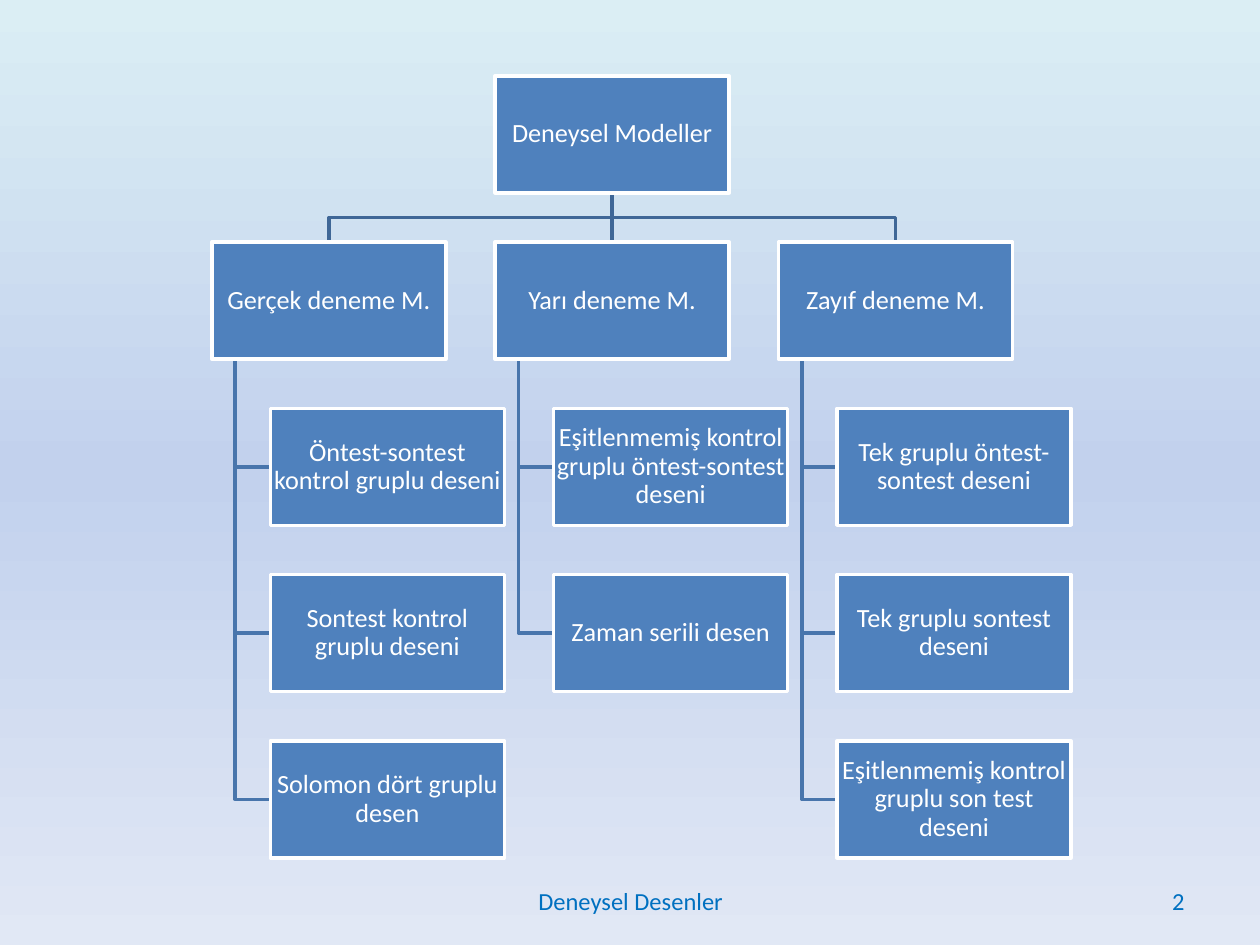
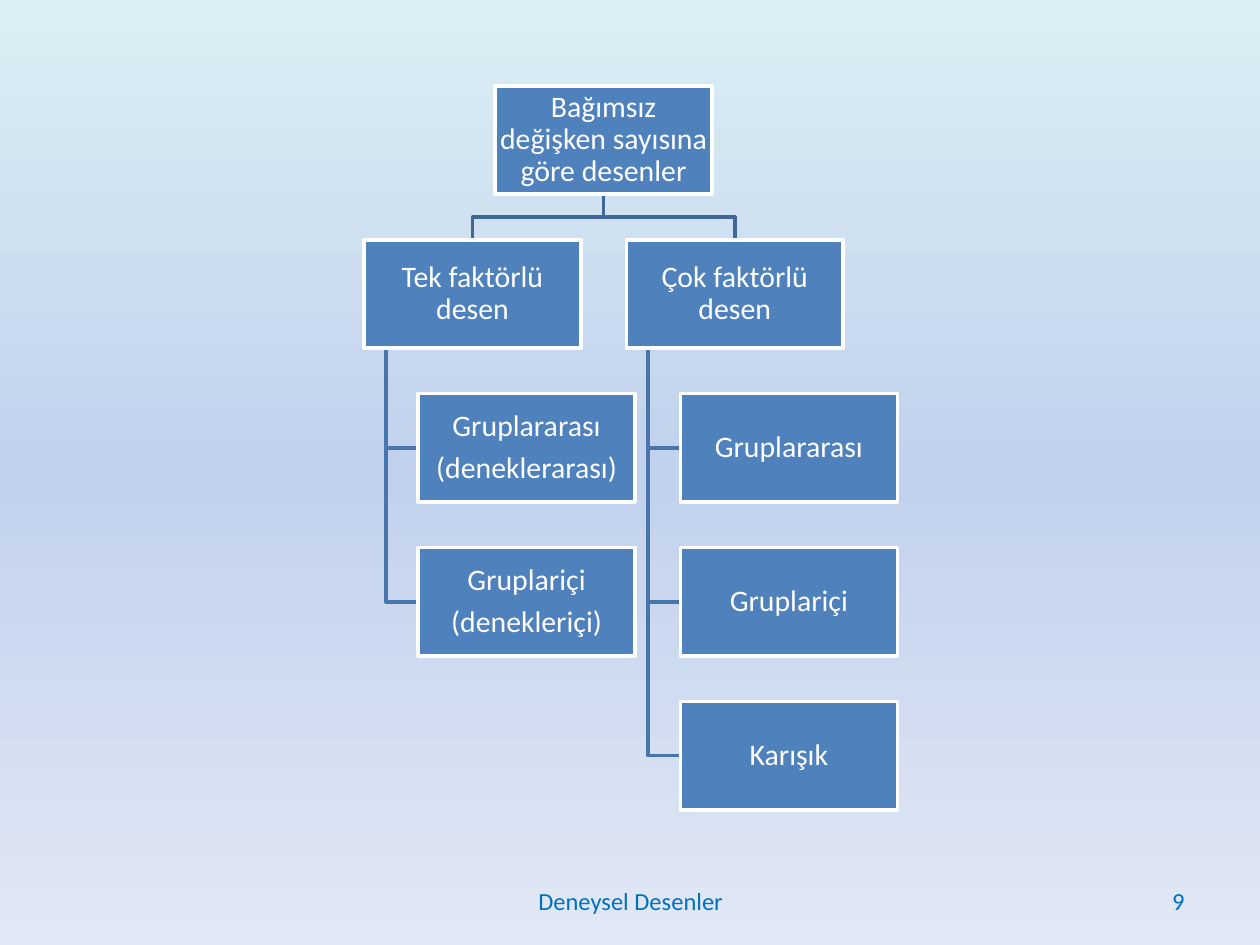
from copy import deepcopy
from pptx import Presentation
from pptx.dml.color import RGBColor
from pptx.enum.shapes import MSO_CONNECTOR as Link, MSO_SHAPE as Shape
from pptx.enum.text import MSO_ANCHOR as Anchor, PP_ALIGN as Align
from pptx.oxml import parse_xml
from pptx.oxml.ns import nsdecls, qn
from pptx.util import Cm, Pt

WHITE, BLUE, NOTE = "FFFFFF", "4F81BD", "0070C0"
TRUNK, TWIG = "3F6797", "4875AC"
SKY = [(0, "DBEEF4"), (0.5, "C2D1ED"), (1, "E1E8F5")]

# Sizes in cm; head boxes start at left, rows at top
CHARTS = [
    dict(page="2", left=4.27, top=1.53, wide=4.72, size=15,
         root="Deneysel Modeller",
         heads={
             "Gerçek deneme M.": ["Öntest-sontest kontrol gruplu deseni",
                                  "Sontest kontrol gruplu deseni",
                                  "Solomon dört gruplu desen"],
             "Yarı deneme M.": ["Eşitlenmemiş kontrol gruplu öntest-sontest deseni",
                                "Zaman serili desen"],
             "Zayıf deneme M.": ["Tek gruplu öntest-sontest deseni",
                                 "Tek gruplu sontest deseni",
                                 "Eşitlenmemiş kontrol gruplu son test deseni"]}),
    dict(page="9", left=7.34, top=1.73, wide=4.37, size=17,
         root="Bağımsız değişken sayısına göre desenler",
         heads={
             "Tek faktörlü desen": ["Gruplararası\n(deneklerarası)",
                                    "Gruplariçi\n(denekleriçi)"],
             "Çok faktörlü desen": ["Gruplararası", "Gruplariçi", "Karışık"]}),
]


def tint(code):
    return RGBColor.from_string(code)


def write(shape, text, size, color, align, pad, para):
    frame = shape.text_frame
    look = dict(word_wrap=True, vertical_anchor=Anchor.MIDDLE,
                margin_left=pad, margin_right=pad,
                margin_top=pad, margin_bottom=pad)
    for key, value in look.items():
        setattr(frame, key, value)
    frame.text = text
    for line in frame.paragraphs:
        for key, value in dict(para, alignment=align).items():
            setattr(line, key, value)
        for key, value in dict(name="Calibri", size=Pt(size)).items():
            setattr(line.font, key, value)
        line.font.color.rgb = tint(color)


deck = Presentation()
deck.slide_width, deck.slide_height = Cm(25.4), Cm(19.05)

for chart in CHARTS:
    slide = deck.slides.add_slide(deck.slide_layouts[6])
    shapes = slide.shapes

    # Background: three stops, running downwards
    fill = slide.background.fill
    fill.gradient()
    fill.gradient_angle = 270
    stops = slide.element.find(".//" + qn("a:gsLst"))
    stops.append(deepcopy(stops[-1]))
    for stop, (place, code) in zip(fill.gradient_stops, SKY):
        stop.position = place
        stop.color.rgb = tint(code)

    # Grid: all measures follow from the box width
    wide, left, top = chart["wide"], chart["left"], chart["top"]
    high, step, pitch = wide / 2, wide * 1.21, wide * 0.71
    heads, size = chart["heads"], chart["size"]
    mid = left + (len(heads) - 1) * step / 2

    # Plan the boxes and the bent lines
    plan = [(mid, 0, chart["root"])]
    bends = []
    for col, (head, leaves) in enumerate(heads.items()):
        x = left + col * step
        plan.append((x, 1, head))
        if abs(x - mid) > 0.01:
            a, b = mid + wide / 2, x + wide / 2
            y = top + (high + pitch) / 2
            bends.append((TRUNK, [(a, top + high), (a, y), (b, y),
                                  (b, top + pitch)]))
        for row, leaf in enumerate(leaves, 2):
            plan.append((x + wide / 4, row, leaf))
            stem, y = x + wide / 10, top + row * pitch + high / 2
            bends.append((TWIG, [(stem, top + pitch + high), (stem, y),
                                 (x + wide / 4, y)]))

    # Boxes
    boxes = {}
    for x, row, text in plan:
        box = shapes.add_shape(Shape.RECTANGLE, Cm(x), Cm(top + row * pitch),
                               Cm(wide), Cm(high))
        box.shadow.inherit = False
        box.fill.solid()
        box.fill.fore_color.rgb = tint(BLUE)
        box.line.color.rgb = tint(WHITE)
        box.line.width = Pt(2)
        write(box, text, size, WHITE, Align.CENTER, Cm(0.03),
              dict(line_spacing=0.9, space_after=Pt(0.35 * size)))
        boxes[text] = box
    root = boxes[chart["root"]]

    # Lines, placed behind the boxes
    lines = []
    for code, spots in bends:
        spots = [(Cm(x), Cm(y)) for x, y in spots]
        pen = shapes.build_freeform(*spots[0])
        pen.add_line_segments(spots[1:], close=False)
        bend = pen.convert_to_shape()
        bend.fill.background()
        bend.shadow.inherit = False
        lines.append((bend, code))
    for head in heads:
        if abs(boxes[head].left - root.left) < Cm(0.01):
            link = shapes.add_connector(Link.STRAIGHT, 0, 0, 0, 0)
            link.begin_connect(root, 2)
            link.end_connect(boxes[head], 0)
            link.element.spPr.append(
                parse_xml("<a:effectLst %s/>" % nsdecls("a")))
            lines.append((link, TRUNK))
    for line, code in lines:
        line.line.color.rgb = tint(code)
        line.line.width = Pt(2)
        root.element.addprevious(line.element)

    # Footer and page number
    for x, w, text, align in [(8.69, 8.05, "Deneysel Desenler", Align.CENTER),
                              (18.21, 5.92, chart["page"], Align.RIGHT)]:
        note = shapes.add_textbox(Cm(x), Cm(17.65), Cm(w), Cm(1.02))
        write(note, text, 14, NOTE, align, Cm(0.25), {})

deck.save("out.pptx")
